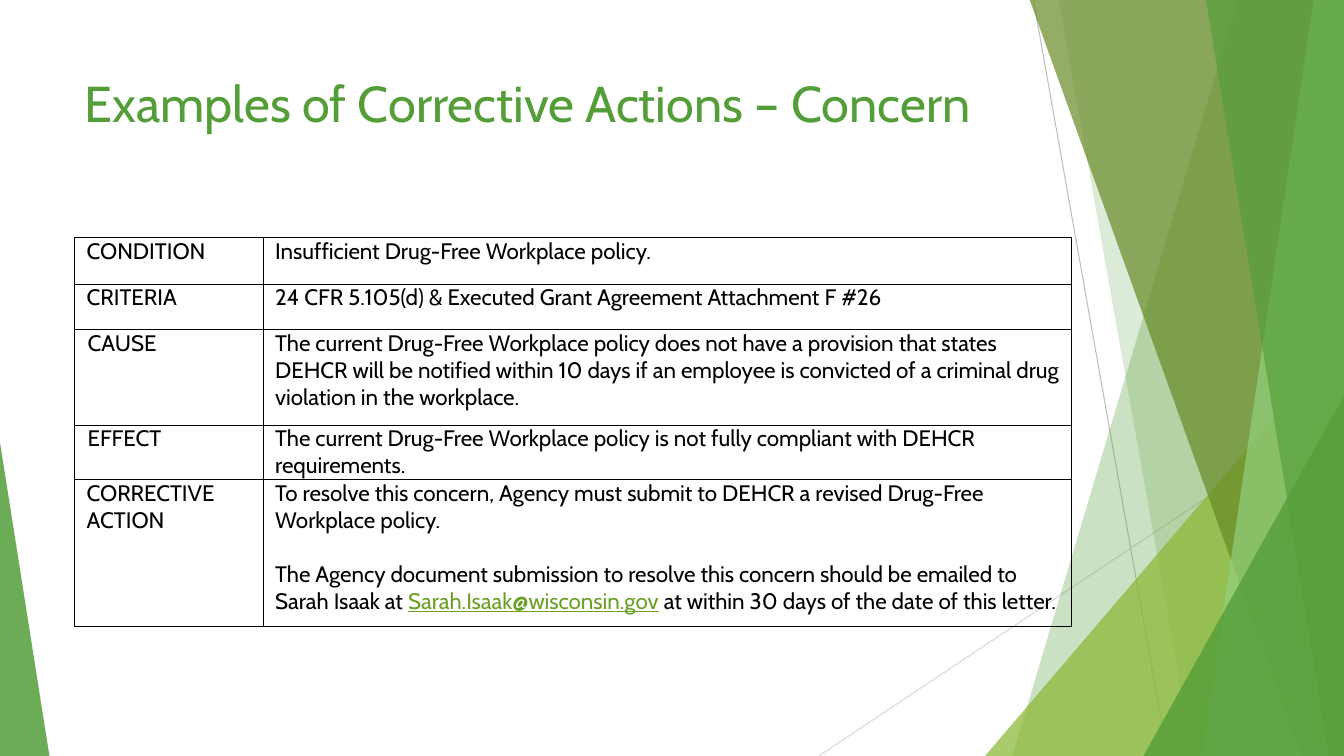
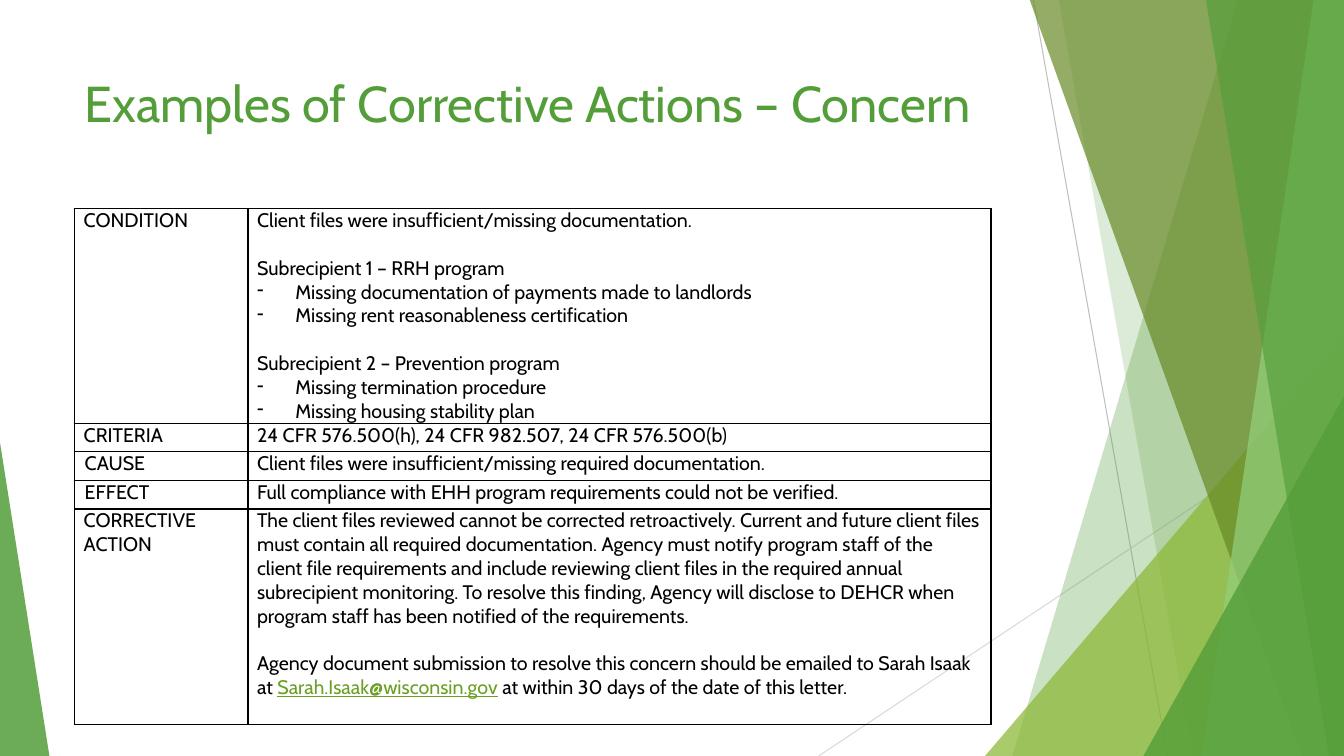
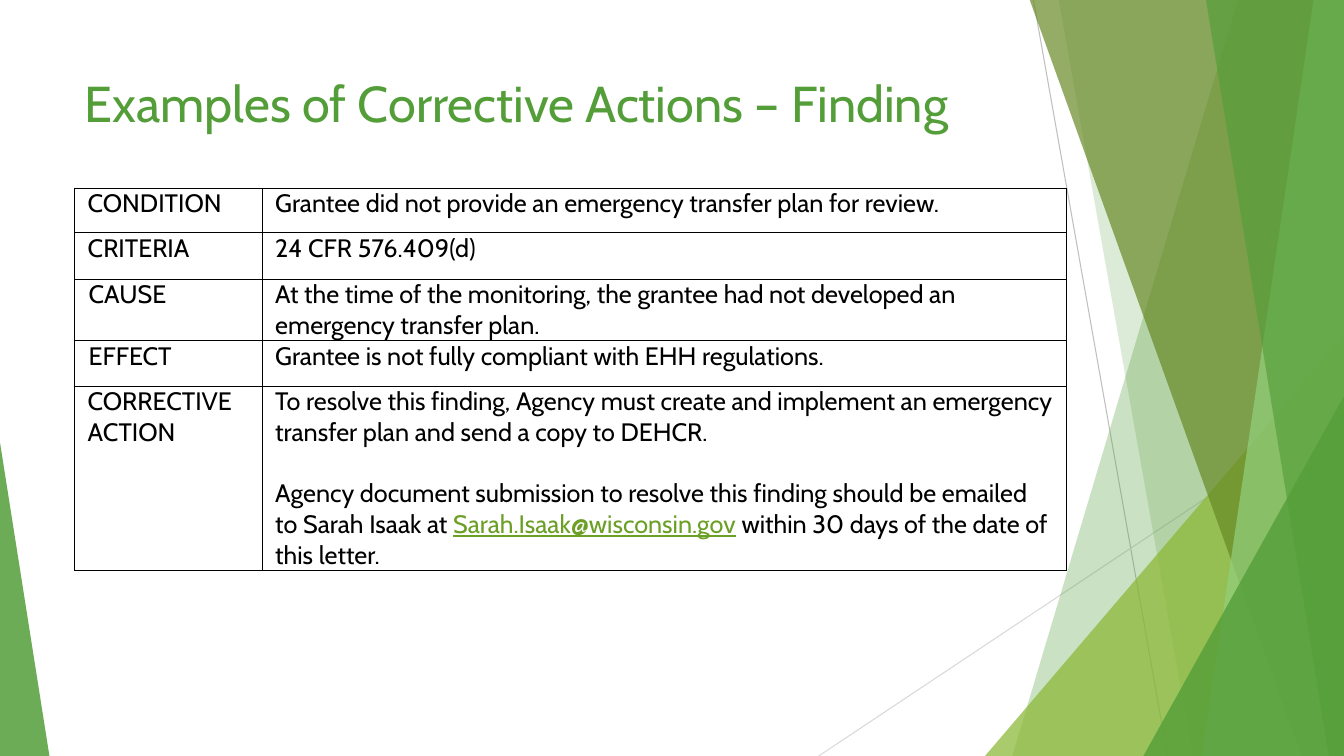
"""Build three slides of corrective action examples over one shared green backdrop."""
import lxml.etree
import pptx
import pptx.dml.color
import pptx.enum.shapes
import pptx.enum.text
import pptx.oxml.ns
import pptx.util

Inches = pptx.util.Inches
Pt = pptx.util.Pt
qn = pptx.oxml.ns.qn

WIDTH, HEIGHT = 13.33, 7.5
BLEED = -0.01
MARGIN = 0.74

THEME = {
    "font": "Cabin",
    "title_size": 36,
    "line_height": 1.215,
    "green": "549E39",
    "lime": "8AB833",
    "olive": "678A26",
    "mint": "93D07D",
    "link": "6B9F25",
    "text": "000000",
    "ray": "BFBFBF",
    "pale_ray": "D9D9D9",
}

RAYS = [
    ((10.25, 0), (11.58, HEIGHT), "ray"),
    ((WIDTH, 4.03), (8.12, HEIGHT), "pale_ray"),
]
BACKDROP = [
    ("band", 12.28, 10.04, "green", 30),
    ("band", 10.5, 11.83, "green", 20),
    ("triangle", (9.77, 3.33, 3.56), 1, "lime", 72),
    ("band", 10.21, 12.91, "olive", 70),
    ("band", 13.03, 11.92, "mint", 70),
    ("band", 11.96, 13.18, "green", 65),
    ("triangle", (11.34, 3.93, 1.99), 1, "green", 80),
    ("triangle", (0, 4.39, 0.49), 0, "green", 85),
]

EMAIL = "Sarah.Isaak@wisconsin.gov"
LABELS = [("CONDITION", 0), ("CRITERIA", 0), ("CAUSE", 0.01), ("EFFECT", 0.01), ("CORRECTIVE ACTION", 0)]

SLIDES = [
    {
        "title": "Examples of Corrective Actions – Concern",
        "top": 2.36, "size": 16, "inset": 0.12,
        "cols": [1.87, 8.02], "rows": [0.46, 0.45, 0.95, 0.34, 1.46],
        "answers": [
            [("plain", "Insufficient Drug-Free Workplace policy.")],
            [("plain", "24 CFR 5.105(d) & Executed Grant Agreement Attachment F #26")],
            [("plain", "The current Drug-Free Workplace policy does not have a provision that states "
                       "DEHCR will be notified within 10 days if an employee is convicted of a criminal "
                       "drug violation in the workplace.")],
            [("plain", "The current Drug-Free Workplace policy is not fully compliant with DEHCR requirements.")],
            [("plain", "To resolve this concern, Agency must submit to DEHCR a revised Drug-Free Workplace policy."),
             ("spaced", "The Agency document submission to resolve this concern should be emailed to "
                        f"Sarah Isaak at {EMAIL} at within 30 days of the date of this letter.")],
        ],
    },
    {
        "title": "Examples of Corrective Actions – Concern",
        "top": 2.07, "size": 14, "inset": 0.09,
        "cols": [1.72, 7.37], "rows": [2.01, 0.28, 0.29, 0.28, 2.14],
        "answers": [
            [("plain", "Client files were insufficient/missing documentation."),
             ("spaced", "Subrecipient 1 – RRH program"),
             ("bullet", "Missing documentation of payments made to landlords"),
             ("bullet", "Missing rent reasonableness certification"),
             ("spaced", "Subrecipient 2 – Prevention program"),
             ("bullet", "Missing termination procedure"),
             ("bullet", "Missing housing stability plan")],
            [("plain", "24 CFR 576.500(h), 24 CFR 982.507, 24 CFR 576.500(b)")],
            [("plain", "Client files were insufficient/missing required documentation.")],
            [("plain", "Full compliance with EHH program requirements could not be verified.")],
            [("plain", "The client files reviewed cannot be corrected retroactively. Current and future client "
                       "files must contain all required documentation. Agency must notify program staff of the "
                       "client file requirements and include reviewing client files in the required annual "
                       "subrecipient monitoring. To resolve this finding, Agency will disclose to DEHCR when "
                       "program staff has been notified of the requirements."),
             ("spaced", "Agency document submission to resolve this concern should be emailed to Sarah Isaak "
                        f"at {EMAIL} at within 30 days of the date of this letter.")],
        ],
    },
    {
        "title": "Examples of Corrective Actions – Finding",
        "top": 1.87, "size": 18, "inset": 0.13,
        "cols": [1.86, 7.98], "rows": [0.44, 0.46, 0.61, 0.45, 1.52],
        "answers": [
            [("plain", "Grantee did not provide an emergency transfer plan for review.")],
            [("plain", "24 CFR 576.409(d)")],
            [("plain", "At the time of the monitoring, the grantee had not developed an emergency transfer plan.")],
            [("plain", "Grantee is not fully compliant with EHH regulations.")],
            [("plain", "To resolve this finding, Agency must create and implement an emergency transfer plan "
                       "and send a copy to DEHCR."),
             ("spaced", "Agency document submission to resolve this finding should be emailed to Sarah Isaak "
                        f"at {EMAIL} within 30 days of the date of this letter.")],
        ],
    },
]


def rgb(name):
    return pptx.dml.color.RGBColor.from_string(THEME[name])


def write(p, text, size, color="text", style="plain", indent=0):
    p.alignment = pptx.enum.text.PP_ALIGN.LEFT
    pPr = p._p.get_or_add_pPr()
    if style == "spaced":
        p.space_before = Pt(round(size * THEME["line_height"], 1))
    if style == "bullet":
        pPr.set("marL", str(Inches(0.38)))
        pPr.set("indent", str(-Inches(0.38)))
        lxml.etree.SubElement(pPr, qn("a:buChar"), char="-")
    elif indent:
        pPr.set("indent", str(Inches(indent)))
    for part in text.partition(EMAIL):
        if part:
            r = p.add_run()
            r.text = part
            r.font.name, r.font.size = THEME["font"], Pt(size)
            r.font.color.rgb = rgb("link" if part == EMAIL else color)
            r.font.underline = True if part == EMAIL else None


def add_ray(shapes, start, end, color):
    ends = [Inches(v) for v in (*start, *end)]
    line = shapes.add_connector(pptx.enum.shapes.MSO_CONNECTOR.STRAIGHT, *ends)
    line.line.color.rgb = rgb(color)
    line.line.width = Pt(0.75)
    lxml.etree.SubElement(line.element.spPr, qn("a:effectLst"))
    return line


def add_facet(shapes, kind, place, slant, color, opacity):
    if kind == "band":
        builder = shapes.build_freeform(Inches(place), Inches(BLEED))
        corners = [(WIDTH, BLEED), (WIDTH, HEIGHT), (slant, HEIGHT)]
        builder.add_line_segments([(Inches(x), Inches(y)) for x, y in corners])
        sp = builder.convert_to_shape()
    else:
        left, top, width = place
        box = [Inches(v) for v in (left, top, width, HEIGHT - top)]
        sp = shapes.add_shape(pptx.enum.shapes.MSO_SHAPE.ISOSCELES_TRIANGLE, *box)
        sp.adjustments[0] = slant
    sp.shadow.inherit = False
    sp.line.fill.background()
    sp.fill.solid()
    sp.fill.fore_color.rgb = rgb(color)
    clr = sp.element.spPr.find(qn("a:solidFill")).find(qn("a:srgbClr"))
    lxml.etree.SubElement(clr, qn("a:alpha"), val=str(opacity * 1000))
    return sp


def move_backdrop_to_layout(s, layout):
    drawn = [add_ray(s.shapes, *ray) for ray in RAYS]
    drawn += [add_facet(s.shapes, *facet) for facet in BACKDROP]
    for sp in drawn:
        layout.shapes.element.append(sp.element)


def format_title(title, text):
    title.left, title.top, title.width, title.height = (Inches(v) for v in (MARGIN, 0.67, 9.4, 1.44))
    tf = title.text_frame
    tf.word_wrap = True
    tf.auto_size = pptx.enum.text.MSO_AUTO_SIZE.NONE
    tf.vertical_anchor = pptx.enum.text.MSO_ANCHOR.TOP
    write(tf.paragraphs[0], text, THEME["title_size"], color="green")


def fill_cell(cell, paragraphs, size, inset, indent=0):
    cell.margin_left = cell.margin_right = Inches(inset)
    cell.margin_top = cell.margin_bottom = 0
    cell.fill.background()
    tcPr = cell._tc.get_or_add_tcPr()
    for i, side in enumerate(("lnL", "lnR", "lnT", "lnB")):
        ln = lxml.etree.Element(qn(f"a:{side}"), w=str(Pt(1)))
        fill = lxml.etree.SubElement(ln, qn("a:solidFill"))
        lxml.etree.SubElement(fill, qn("a:srgbClr"), val=THEME["text"])
        tcPr.insert(i, ln)
    tf = cell.text_frame
    for i, (style, text) in enumerate(paragraphs):
        p = tf.add_paragraph() if i else tf.paragraphs[0]
        write(p, text, size, style=style, indent=indent)


def add_action_table(s, content):
    cols, rows = content["cols"], content["rows"]
    box = [Inches(v) for v in (MARGIN, content["top"], sum(cols), sum(rows))]
    table = s.shapes.add_table(len(rows), len(cols), *box).table
    table.first_row = table.horz_banding = False
    for column, width in zip(table.columns, cols):
        column.width = Inches(width)
    size, inset = content["size"], content["inset"]
    for i, ((label, indent), answer) in enumerate(zip(LABELS, content["answers"])):
        table.rows[i].height = Inches(rows[i])
        fill_cell(table.cell(i, 0), [("plain", label)], size, inset, indent)
        fill_cell(table.cell(i, 1), answer, size, inset)


def main():
    prs = pptx.Presentation()
    prs.slide_width, prs.slide_height = Inches(WIDTH), Inches(HEIGHT)
    layout = prs.slide_layouts[5]
    for i, content in enumerate(SLIDES):
        s = prs.slides.add_slide(layout)
        if i == 0:
            move_backdrop_to_layout(s, layout)
        format_title(s.shapes.title, content["title"])
        add_action_table(s, content)
    prs.save("out.pptx")


if __name__ == "__main__":
    main()
